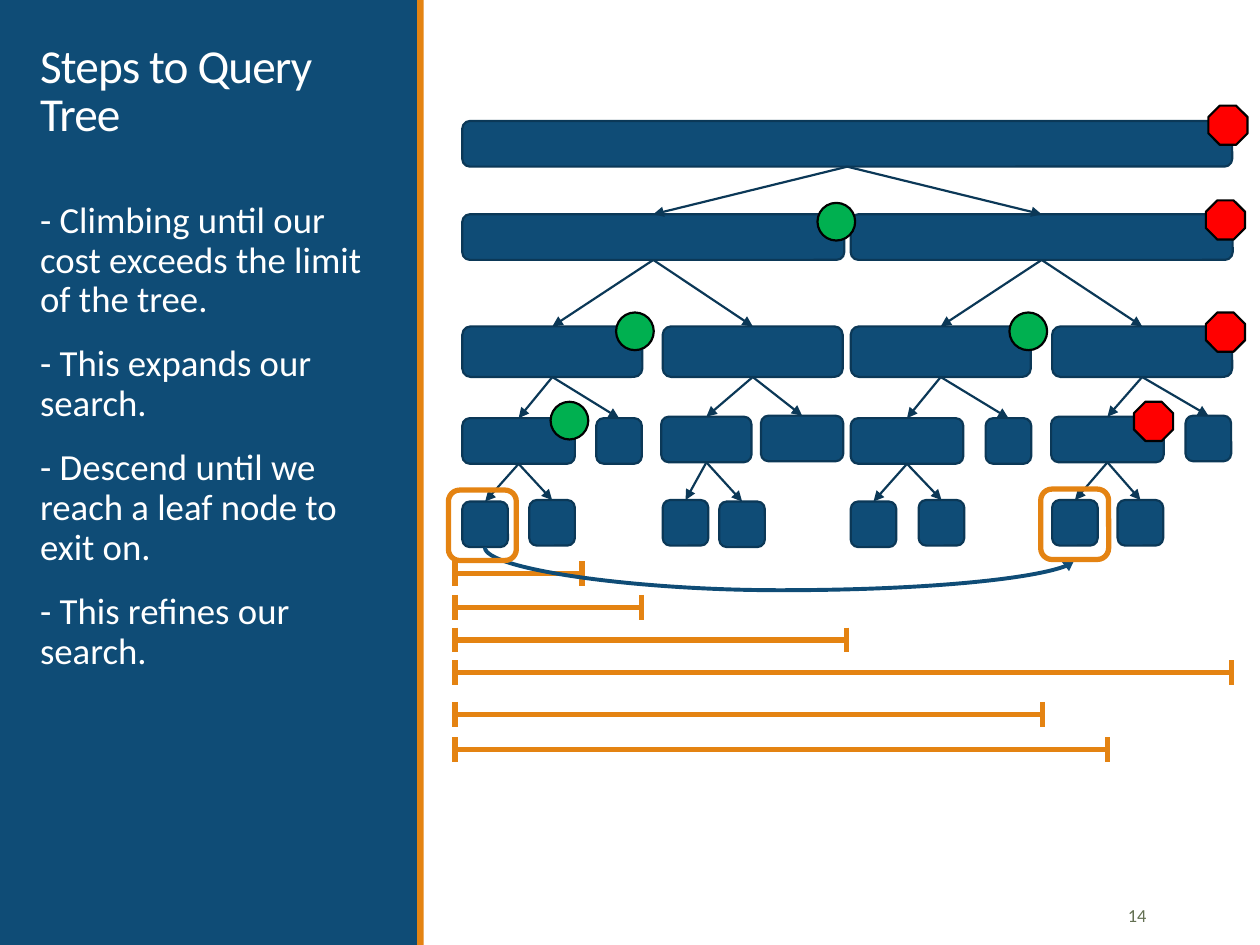
from pptx import Presentation
from pptx.dml.color import RGBColor
from pptx.enum.shapes import MSO_CONNECTOR, MSO_SHAPE
from pptx.enum.text import MSO_ANCHOR, PP_ALIGN
from pptx.oxml.ns import qn
from pptx.util import Cm, Pt
from lxml.etree import SubElement

HUES = {"navy": "0F4C76", "edge": "0B3857", "gold": "E48312", "green": "00B050",
        "red": "FF0000", "black": "000000", "white": "FFFFFF", "gray": "637052"}

STEPS = ["- Climbing until our cost exceeds the limit of the tree.",
         "- This expands our search.",
         "- Descend until we reach a leaf node to exit on.",
         "- This refines our search."]

# fmt: off
LEVELS = [
    (0.92, [(9.32, 2.44, 15.52)]),
    (0.92, [(9.32, 4.32, 7.7), (17.15, 4.32, 7.7)]),
    (1.02, [(x, 6.58, 3.63) for x in (9.32, 13.36, 17.15, 21.21)]),
    (0.92, [(9.32, 8.43, 2.27), (12.02, 8.43, 0.92), (13.33, 8.4, 1.82), (15.34, 8.38, 1.66),
            (17.15, 8.43, 2.27), (19.87, 8.43, 0.92), (21.19, 8.4, 2.27), (23.9, 8.38, 0.92)]),
    (0.92, [(9.32, 10.11, 0.92), (10.67, 10.08, 0.92), (13.36, 10.08, 0.92), (14.5, 10.11, 0.92),
            (17.15, 10.11, 0.92), (18.52, 10.08, 0.92), (21.21, 10.08, 0.92), (22.53, 10.08, 0.92)]),
]
# fmt: on
SPANS = [(11.73, 11.56), (12.93, 12.24), (17.07, 12.9),
         (24.82, 13.56), (21.01, 14.4), (22.33, 15.11)]
DOTS = [(11.1, 8.1), (12.42, 6.3), (16.48, 4.09), (20.35, 6.3)]
STOPS = [(24.36, 2.13), (24.31, 4.04), (24.31, 6.3), (22.86, 8.1)]
RINGS = [(20.98, 9.86), (9.04, 9.88)]


def hue(name):
    return RGBColor.from_string(HUES[name])


def write(frame, lines, size, color="white", align=PP_ALIGN.LEFT, lead=1.0,
          before=0, after=0, track=0):
    for num, line in enumerate(lines):
        para = frame.add_paragraph() if num else frame.paragraphs[0]
        para.alignment, para.line_spacing = align, lead
        para.space_before, para.space_after = Pt(before), Pt(after)
        run = para.add_run()
        run.text = line
        run.font.name, run.font.size = "Calibri", Pt(size)
        run.font.color.rgb = hue(color)
        if track:
            run.font._element.set("spc", str(track))


class Deck:
    """Hold the style and the current slide, and draw each kind of element."""

    thin, bold = 1.25, 3

    def __init__(self):
        self.file = Presentation()
        self.file.slide_width, self.file.slide_height = Cm(25.4), Cm(19.05)
        self.slide = self.file.slides.add_slide(self.file.slide_layouts[6])

    def shape(self, kind, x, y, w, h, fill=None, edge=None, width=thin):
        item = self.slide.shapes.add_shape(kind, Cm(x), Cm(y), Cm(w), Cm(h))
        item.shadow.inherit = False
        if fill:
            item.fill.solid()
            item.fill.fore_color.rgb = hue(fill)
        else:
            item.fill.background()
        if edge:
            item.line.color.rgb = hue(edge)
            item.line.width = Pt(width)
        else:
            item.line.fill.background()
        return item

    def text(self, x, y, w, h, lines, anchor=MSO_ANCHOR.TOP, **style):
        frame = self.slide.shapes.add_textbox(Cm(x), Cm(y), Cm(w), Cm(h)).text_frame
        frame.word_wrap, frame.vertical_anchor = True, anchor
        write(frame, lines, **style)

    def line(self, x1, y1, x2, y2, color, width, arrow=False, kind=MSO_CONNECTOR.STRAIGHT):
        item = self.slide.shapes.add_connector(kind, Cm(x1), Cm(y1), Cm(x2), Cm(y2))
        item.line.color.rgb = hue(color)
        item.line.width = Pt(width)
        if arrow:
            SubElement(item.line._get_or_add_ln(), qn("a:tailEnd"), type="triangle")
        SubElement(item._element.spPr, qn("a:effectLst"))
        return item

    def link(self, top, low):
        item = self.line(0, 0, 1, 1, "edge", self.thin, arrow=True)
        item.begin_connect(top, 2)
        item.end_connect(low, 0)

    def curve(self, x, y, w, h, bend):
        item = self.line(x, y, x + w, y + h, "navy", 2.25, True, MSO_CONNECTOR.CURVE)
        props = item._element.spPr
        frame = props.find(qn("a:xfrm"))
        frame.set("rot", "16200000")
        frame.set("flipH", "1")
        guide = props.find(qn("a:prstGeom")).find(qn("a:avLst"))
        SubElement(guide, qn("a:gd"), name="adj1", fmla=f"val {round(bend * 100000)}")

    def span(self, left, right, y, tick=0.25):
        self.line(left, y, right, y, "gold", self.bold)
        for x in (left, right):
            self.line(x, y - tick, x, y + tick, "gold", self.bold)

    def tree(self, levels):
        box = MSO_SHAPE.ROUNDED_RECTANGLE
        rows = [[self.shape(box, x, y, w, high, "navy", "edge") for x, y, w in row]
                for high, row in levels]
        for above, below in zip(rows, rows[1:]):
            skip = 2 * len(above) // len(below)
            for num, node in enumerate(below):
                self.link(above[num // 2 * skip], node)


def main():
    deck = Deck()
    deck.shape(MSO_SHAPE.RECTANGLE, 0, 0, 8.43, 19.05, "navy")
    deck.shape(MSO_SHAPE.RECTANGLE, 8.41, 0, 0.13, 19.05, "gold")
    deck.text(0.56, 0.53, 7.47, 2.44, ["Steps to Query Tree"], MSO_ANCHOR.BOTTOM,
              size=27, lead=0.85, track=-50)
    deck.text(0.56, 3.94, 7.06, 14.15, STEPS, size=21, lead=0.9, before=12, after=2)
    deck.text(20.62, 17.93, 2.74, 1.02, ["14"], MSO_ANCHOR.MIDDLE,
              size=10.5, color="gray", align=PP_ALIGN.RIGHT)
    deck.tree(LEVELS)
    for right, y in SPANS:
        deck.span(9.17, right, y)
    for x, y in DOTS:
        deck.shape(MSO_SHAPE.OVAL, x, y, 0.76, 0.76, "green", "black")
    for x, y in STOPS:
        deck.shape(MSO_SHAPE.OCTAGON, x, y, 0.79, 0.79, "red", "black")
    deck.curve(15.6, 5.21, 0.24, 11.89, 3.6)
    for x, y in RINGS:
        deck.shape(MSO_SHAPE.ROUNDED_RECTANGLE, x, y, 1.37, 1.42, None, "gold", deck.bold)
    deck.file.save("out.pptx")


if __name__ == "__main__":
    main()
